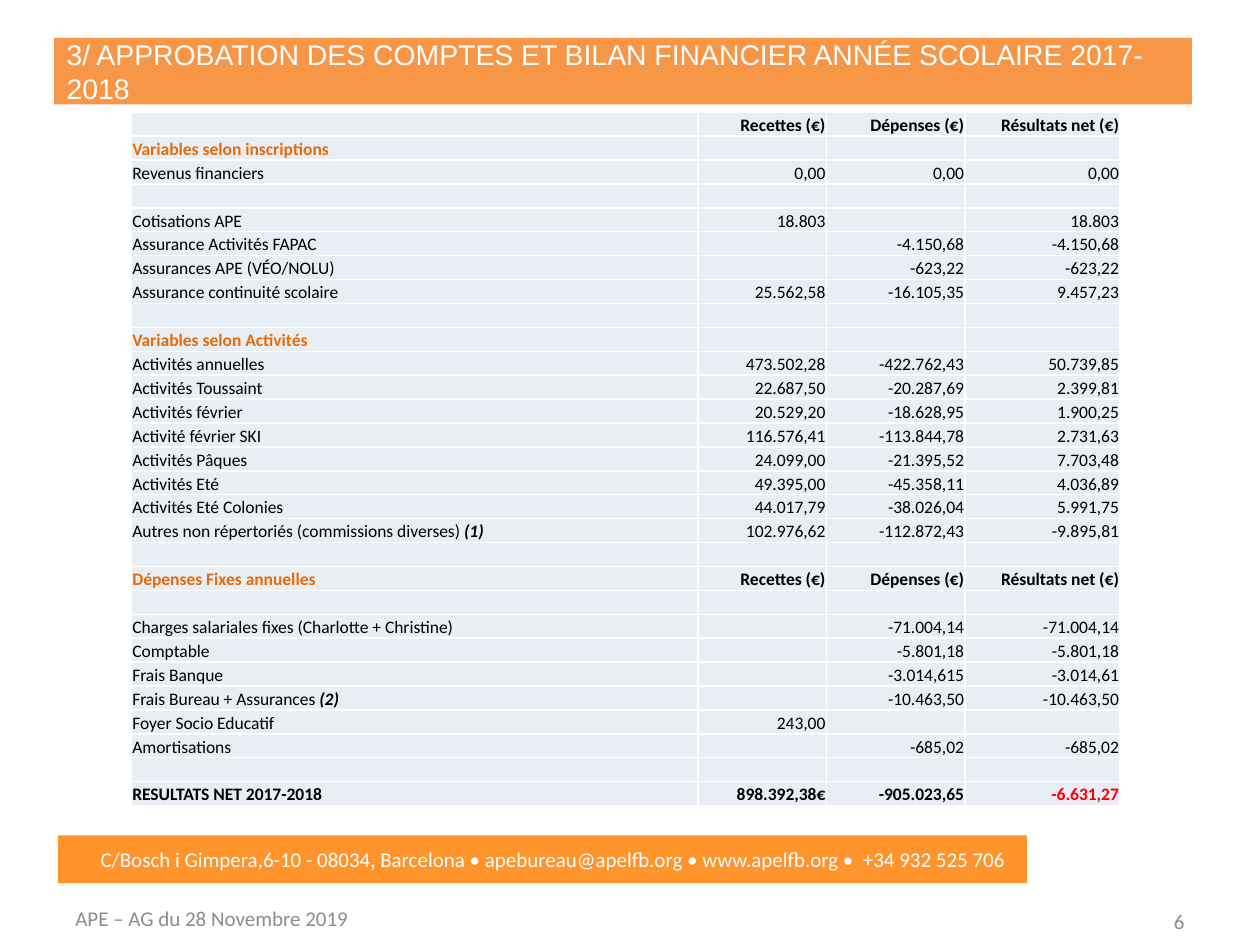
"""Builds the slide with the annual accounts of a parents' association."""
from lxml.etree import SubElement
from pptx import Presentation
from pptx.dml.color import RGBColor
from pptx.enum.shapes import MSO_SHAPE as Shape
from pptx.enum.text import MSO_ANCHOR as Anchor, PP_ALIGN as Align
from pptx.oxml.ns import qn
from pptx.util import Inches, Pt

WHITE = RGBColor(0xFF, 0xFF, 0xFF)
BLACK = RGBColor(0x00, 0x00, 0x00)
RED = RGBColor(0xFF, 0x00, 0x00)
GREY = RGBColor(0x8C, 0x8C, 0x8C)
TITLE_ORANGE = RGBColor(0xF7, 0x96, 0x46)
FOOTER_ORANGE = RGBColor(0xFF, 0x94, 0x2C)
HEADING_ORANGE = RGBColor(0xE4, 0x6C, 0x0A)
CELL_BLUE = RGBColor(0xE9, 0xED, 0xF4)

GRID = Inches(0.1)
COLUMNS = (45, 10.2, 11, 12.3)
ROW = 1.9

BLANK = ("", "", "", "")
HEADERS = ("Recettes (€)", "Dépenses (€)", "Résultats net (€)")
SECTIONS = ("Variables selon inscriptions", "Variables selon Activités",
            "Dépenses Fixes annuelles")
TOTAL = "RESULTATS NET 2017-2018"
NOTES = {"Autres non répertoriés (commissions diverses) ": "(1)",
         "Frais Bureau + Assurances ": "(2)"}
ACCOUNTS = (
    ("", *HEADERS),
    (SECTIONS[0], "", "", ""),
    ("Revenus financiers", "0,00", "0,00", "0,00"),
    BLANK,
    ("Cotisations APE", "18.803", "", "18.803"),
    ("Assurance Activités FAPAC", "", "-4.150,68", "-4.150,68"),
    ("Assurances APE (VÉO/NOLU)", "", "-623,22", "-623,22"),
    ("Assurance continuité scolaire", "25.562,58", "-16.105,35", "9.457,23"),
    BLANK,
    (SECTIONS[1], "", "", ""),
    ("Activités annuelles", "473.502,28", "-422.762,43", "50.739,85"),
    ("Activités Toussaint", "22.687,50", "-20.287,69", "2.399,81"),
    ("Activités février", "20.529,20", "-18.628,95", "1.900,25"),
    ("Activité février SKI", "116.576,41", "-113.844,78", "2.731,63"),
    ("Activités Pâques", "24.099,00", "-21.395,52", "7.703,48"),
    ("Activités Eté", "49.395,00", "-45.358,11", "4.036,89"),
    ("Activités Eté Colonies", "44.017,79", "-38.026,04", "5.991,75"),
    ("Autres non répertoriés (commissions diverses) ",
     "102.976,62", "-112.872,43", "-9.895,81"),
    BLANK,
    (SECTIONS[2], *HEADERS),
    BLANK,
    ("Charges salariales fixes (Charlotte + Christine)", "", "-71.004,14", "-71.004,14"),
    ("Comptable", "", "-5.801,18", "-5.801,18"),
    ("Frais Banque", "", "-3.014,615", "-3.014,61"),
    ("Frais Bureau + Assurances ", "", "-10.463,50", "-10.463,50"),
    ("Foyer Socio Educatif", "243,00", "", ""),
    ("Amortisations", "", "-685,02", "-685,02"),
    BLANK,
    (TOTAL, "898.392,38€", "-905.023,65", "-6.631,27"),
)


def cells(*counts):
    """Turn counts of grid cells into lengths."""
    return [int(count * GRID) for count in counts]


def set_font(para, size, color, name="Calibri", bold=False):
    """Set the font shared by all runs of a paragraph."""
    font = para.font
    font.name, font.size, font.bold = name, Pt(size), bold
    font.color.rgb = color


def write(frame, text, size, color, name="Calibri", align=Align.LEFT):
    """Write one vertically centred paragraph into a text frame."""
    frame.word_wrap = True
    frame.vertical_anchor = Anchor.MIDDLE
    para = frame.paragraphs[0]
    para.text, para.alignment = text, align
    set_font(para, size, color, name)


def add_band(page, place, color):
    """Add a plain coloured rectangle."""
    band = page.shapes.add_shape(Shape.RECTANGLE, *cells(*place))
    band.shadow.inherit = False
    band.fill.solid()
    band.fill.fore_color.rgb = color
    band.line.fill.background()
    return band


def add_label(page, place, text, color, align=Align.LEFT):
    """Add a line of small text."""
    box = page.shapes.add_textbox(*cells(*place))
    write(box.text_frame, text, 12, color, align=align)


def add_borders(cell):
    """Draw thin white lines on the four sides of a table cell."""
    for side in ("a:lnL", "a:lnR", "a:lnT", "a:lnB"):
        line = SubElement(cell._tc.get_or_add_tcPr(), qn(side), w=str(Pt(1)))
        fill = SubElement(line, qn("a:solidFill"))
        SubElement(fill, qn("a:srgbClr"), val=str(WHITE))


def fill_cell(cell, text, align, color, bold):
    """Style one table cell and write its text with any note mark."""
    add_borders(cell)
    cell.fill.solid()
    cell.fill.fore_color.rgb = CELL_BLUE
    cell.vertical_anchor = Anchor.BOTTOM
    cell.margin_left = cell.margin_right = cell.margin_top = Inches(0.01)
    cell.margin_bottom = 0
    para = cell.text_frame.paragraphs[0]
    para.alignment = align
    set_font(para, 10, color, bold=bold)
    if not text:
        SubElement(para._p, qn("a:endParaRPr"), sz="1000")
        return
    para.add_run().text = text
    if text in NOTES:
        mark = para.add_run()
        mark.text = NOTES[text]
        mark.font.bold = mark.font.italic = True


def add_accounts(page, left, top):
    """Add the table of receipts, expenses and net results."""
    place = cells(left, top, sum(COLUMNS), ROW * len(ACCOUNTS))
    table = page.shapes.add_table(len(ACCOUNTS), len(COLUMNS), *place).table
    table.first_row = table.horz_banding = False
    for column, width in zip(table.columns, cells(*COLUMNS)):
        column.width = width
    for r, entries in enumerate(ACCOUNTS):
        table.rows[r].height = cells(ROW)[0]
        for c, text in enumerate(entries):
            color = HEADING_ORANGE if text in SECTIONS else BLACK
            if entries[0] == TOTAL and c == len(COLUMNS) - 1:
                color = RED
            bold = text in SECTIONS + HEADERS or entries[0] == TOTAL
            align = Align.RIGHT if c else Align.LEFT
            fill_cell(table.cell(r, c), text, align, color, bold)


def main():
    """Build the deck and save it."""
    deck = Presentation()
    deck.slide_width, deck.slide_height = cells(100, 75)
    page = deck.slides.add_slide(deck.slide_layouts[6])
    add_band(page, (4.6, 66.3, 76.9, 3.8), FOOTER_ORANGE)
    add_label(page, (7, 66.7, 74.5, 3),
              "C/Bosch i Gimpera,6-10 - 08034, Barcelona • apebureau@apelfb.org"
              " • www.apelfb.org •  +34 932 525 706", WHITE)
    title = add_band(page, (4.3, 3, 90.3, 5.3), TITLE_ORANGE)
    write(title.text_frame,
          "3/ APPROBATION DES COMPTES ET BILAN FINANCIER ANNÉE SCOLAIRE 2017-2018",
          16.2, WHITE, "Arial")
    add_accounts(page, 10.4, 8.9)
    add_label(page, (5, 70.9, 31.7, 4), "APE – AG du 28 Novembre 2019", GREY)
    add_label(page, (71.7, 71.1, 23.3, 4), "6", GREY, Align.RIGHT)
    deck.save("out.pptx")


if __name__ == "__main__":
    main()
